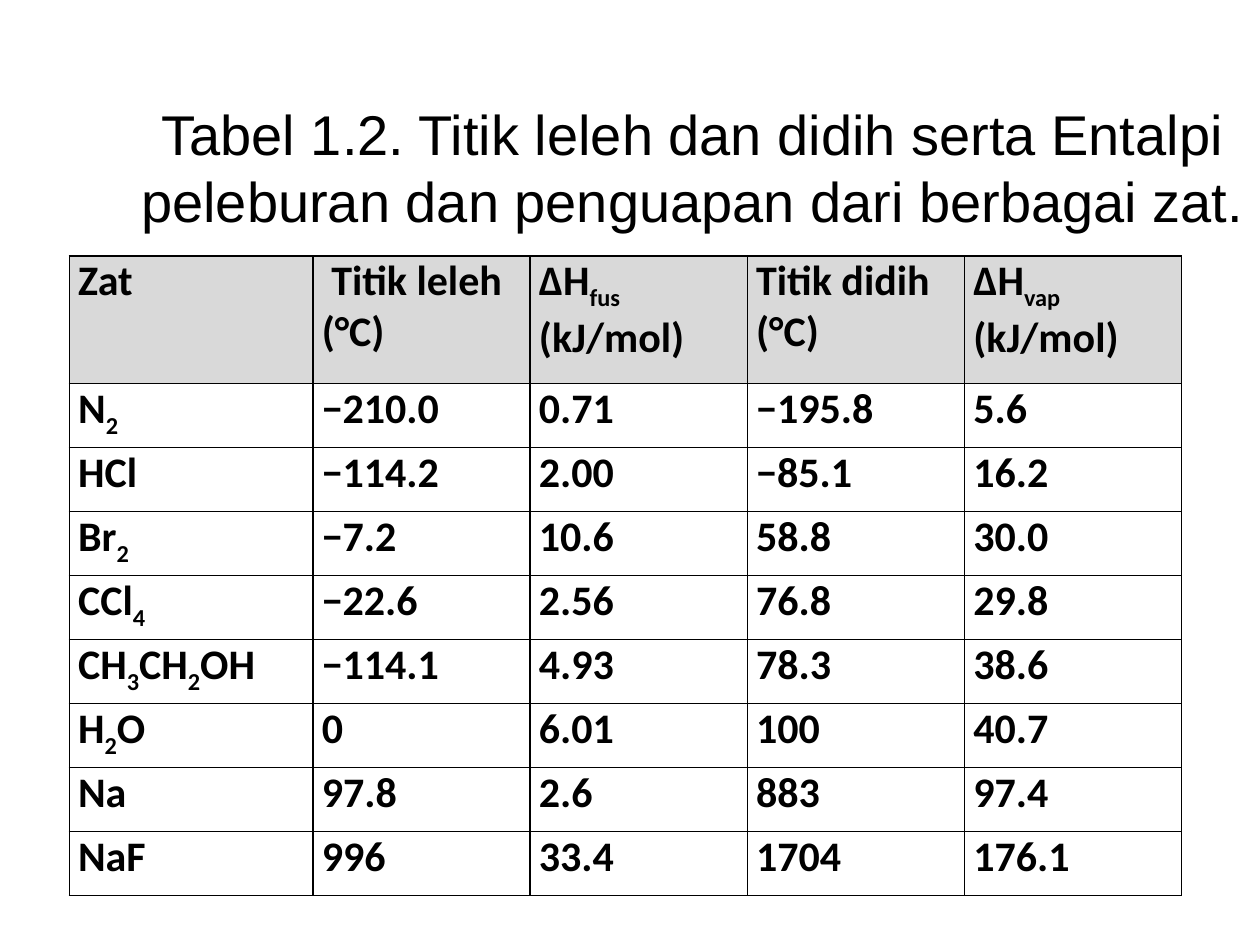
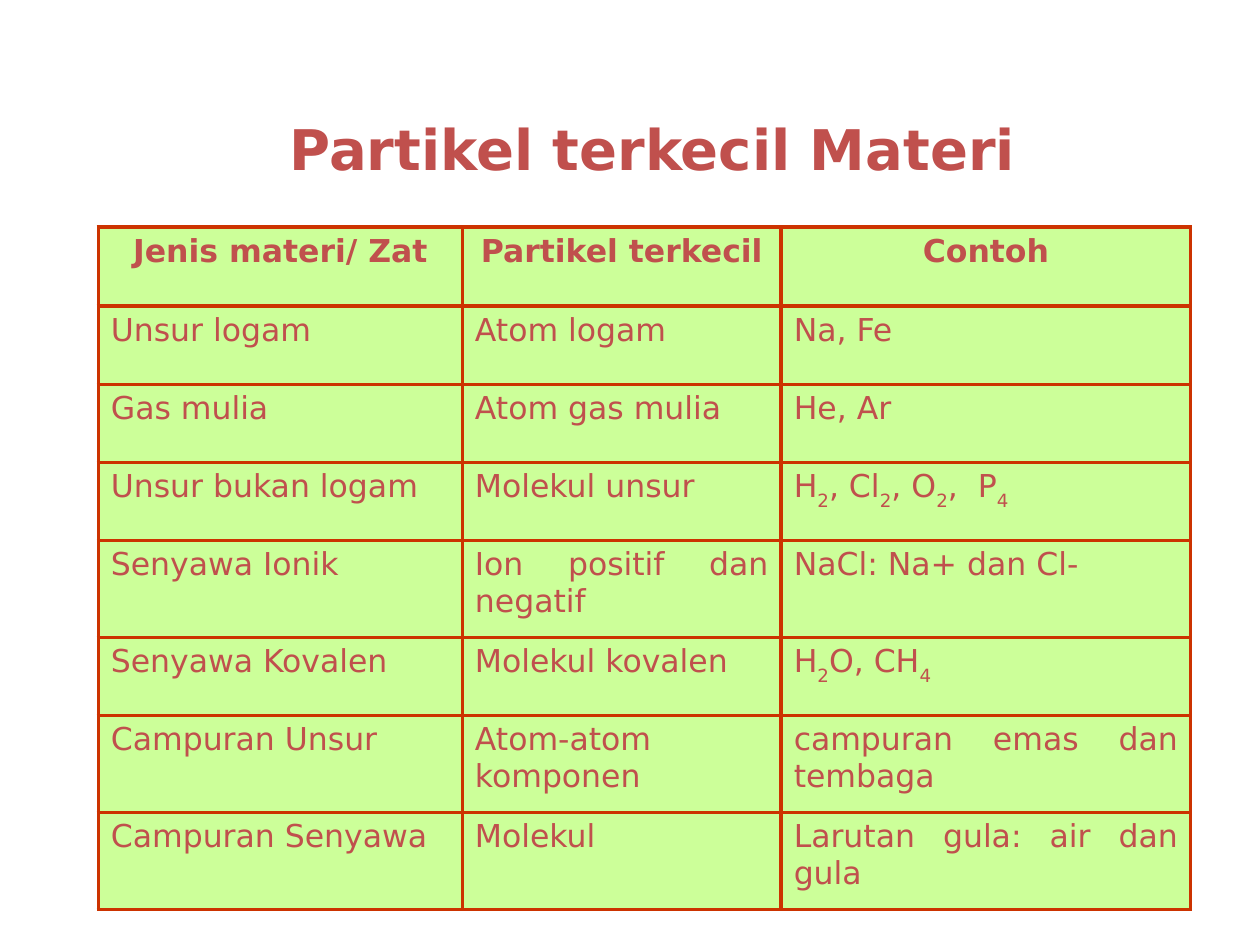
from dataclasses import dataclass
from typing import NamedTuple

from lxml import etree
from pptx import Presentation
from pptx import util as u
from pptx.dml.color import RGBColor
from pptx.enum import text
from pptx.oxml import ns

GRID_COLS, GRID_ROWS = 100, 75
SLIDE_W, SLIDE_H = u.Inches(10), u.Inches(7.5)


@dataclass(frozen=True)
class Theme:
    black: str = "000000"
    grey: str = "D9D9D9"
    red: str = "C0504D"
    rust: str = "CC3300"
    lime: str = "CCFF99"
    plain_face: str = "Arial"
    data_face: str = "Calibri"
    wide_face: str = "DejaVu Sans"
    title_size: float = 32
    data_size: float = 24
    kind_size: float = 18


THEME = Theme()


class Box(NamedTuple):
    """A place in grid columns and rows."""
    left: float
    top: float
    width: float
    height: float

    def emu(self) -> dict[str, int]:
        col, row = SLIDE_W / GRID_COLS, SLIDE_H / GRID_ROWS
        return dict(left=round(self.left * col), top=round(self.top * row),
                    width=round(self.width * col), height=round(self.height * row))


class Type(NamedTuple):
    face: str
    size: float
    color: str
    bold: bool = False


@dataclass(frozen=True)
class Title:
    words: str
    box: Box
    type: Type
    bottom_inset: float = 0.05


@dataclass(frozen=True)
class Grid:
    """A table; text between tildes is subscript, a new line a new paragraph."""
    box: Box
    col_shares: list[float]
    row_shares: list[float]
    cells: list[list[str]]
    head_type: Type
    body_type: Type
    head_fill: str
    body_fill: str | None
    border: str
    border_pt: float
    subscript: int
    margins: dict[str, float]
    head_align: text.PP_ALIGN
    body_align: text.PP_ALIGN


def set_all(target, values: dict) -> None:
    for name, value in values.items():
        setattr(target, name, value)


def set_font(font, style: Type) -> None:
    set_all(font, dict(name=style.face, size=u.Pt(style.size), bold=style.bold))
    font.color.rgb = RGBColor.from_string(style.color)


def write(p, words: str, style: Type, subscript: int = 0) -> None:
    for i, part in enumerate(words.split("~")):
        if part:
            r = p.add_run()
            r.text = part
            set_font(r.font, style)
            if i % 2:
                r._r.get_or_add_rPr().set("baseline", str(-1000 * subscript))


def add_title(slide, title: Title) -> None:
    sp = slide.shapes.title
    set_all(sp, title.box.emu())
    tf = sp.text_frame
    set_all(tf, dict(word_wrap=True, auto_size=text.MSO_AUTO_SIZE.NONE,
                     vertical_anchor=text.MSO_ANCHOR.MIDDLE,
                     margin_bottom=u.Inches(title.bottom_inset)))
    p = tf.paragraphs[0]
    p.alignment = text.PP_ALIGN.CENTER
    write(p, title.words, title.type)


def add_borders(cell, color: str, points: float) -> None:
    """Line all four sides; the lines must come before the fill in the XML."""
    tc_pr = cell._tc.get_or_add_tcPr()
    for i, side in enumerate(("lnL", "lnR", "lnT", "lnB")):
        ln = etree.Element(ns.qn(f"a:{side}"), w=str(u.Pt(points)))
        fill = etree.SubElement(ln, ns.qn("a:solidFill"))
        etree.SubElement(fill, ns.qn("a:srgbClr"), val=color)
        tc_pr.insert(i, ln)


def fill_cell(cell, words: str, grid: Grid, is_head: bool) -> None:
    color = grid.head_fill if is_head else grid.body_fill
    if color:
        cell.fill.solid()
        cell.fill.fore_color.rgb = RGBColor.from_string(color)
    else:
        cell.fill.background()
    add_borders(cell, grid.border, grid.border_pt)
    set_all(cell, {f"margin_{k}": u.Inches(v) for k, v in grid.margins.items()})
    tf = cell.text_frame
    for i, line in enumerate(words.split("\n")):
        p = tf.add_paragraph() if i else tf.paragraphs[0]
        p.alignment = grid.head_align if is_head else grid.body_align
        write(p, line, grid.head_type if is_head else grid.body_type, grid.subscript)


def add_grid(slide, grid: Grid) -> None:
    place = grid.box.emu()
    table = slide.shapes.add_table(len(grid.row_shares), len(grid.col_shares), **place).table
    set_all(table, dict(first_row=False, horz_banding=False))
    for col, share in zip(table.columns, grid.col_shares):
        col.width = round(place["width"] * share / sum(grid.col_shares))
    for row, share in zip(table.rows, grid.row_shares):
        row.height = round(place["height"] * share / sum(grid.row_shares))
    for i, line in enumerate(grid.cells):
        for j, words in enumerate(line):
            fill_cell(table.cell(i, j), words, grid, is_head=i == 0)


HEAT_CELLS = [
    ["Zat", " Titik leleh (°C)", "ΔH~fus~\n(kJ/mol)", "Titik didih (°C)", "ΔH~vap~\n(kJ/mol)"],
    ["N~2~", "−210.0", "0.71", "−195.8", "5.6"],
    ["HCl", "−114.2", "2.00", "−85.1", "16.2"],
    ["Br~2~", "−7.2", "10.6", "58.8", "30.0"],
    ["CCl~4~", "−22.6", "2.56", "76.8", "29.8"],
    ["CH~3~CH~2~OH", "−114.1", "4.93", "78.3", "38.6"],
    ["H~2~O", "0", "6.01", "100", "40.7"],
    ["Na", "97.8", "2.6", "883", "97.4"],
    ["NaF", "996", "33.4", "1704", "176.1"],
]
PARTICLE_CELLS = [
    ["Jenis materi/ Zat", "Partikel terkecil", "Contoh"],
    ["Unsur logam", "Atom logam", "Na, Fe"],
    ["Gas mulia", "Atom gas mulia", "He, Ar"],
    ["Unsur bukan logam", "Molekul unsur", "H~2~, Cl~2~, O~2~,  P~4~"],
    ["Senyawa Ionik", "Ion positif dan negatif", "NaCl: Na+ dan Cl-"],
    ["Senyawa Kovalen", "Molekul kovalen", "H~2~O, CH~4~"],
    ["Campuran Unsur", "Atom-atom komponen", "campuran emas dan tembaga"],
    ["Campuran Senyawa", "Molekul", "Larutan gula: air dan gula"],
]
ONE_LINE, TWO_LINES = 0.62, 0.77
HEAT_TYPE = Type(THEME.data_face, THEME.data_size, THEME.black, True)

SLIDES = [
    (Title("Tabel 1.2. Titik leleh dan didih serta Entalpi peleburan dan "
           "penguapan dari berbagai zat.",
           Box(10, 9.4, 90, 12.5),
           Type(THEME.plain_face, THEME.title_size, THEME.black), bottom_inset=0.54),
     Grid(Box(5.5, 20.3, 88.3, 50.8), [1.93] + [1.72] * 4, [2] + [1] * 8, HEAT_CELLS,
          HEAT_TYPE, HEAT_TYPE, THEME.grey, None, THEME.black, 1, 25,
          dict(left=0.07, right=0.07, top=0, bottom=0),
          text.PP_ALIGN.LEFT, text.PP_ALIGN.LEFT)),
    (Title("Partikel terkecil Materi", Box(17.2, 8.6, 69.2, 6.3),
           Type(THEME.wide_face, THEME.title_size, THEME.red, True)),
     Grid(Box(7.8, 18, 86.7, 54.2), [2.89, 2.53, 3.25],
          [0.63] + [ONE_LINE] * 3 + [TWO_LINES, ONE_LINE] + [TWO_LINES] * 2, PARTICLE_CELLS,
          Type(THEME.wide_face, THEME.kind_size, THEME.red, True),
          Type(THEME.wide_face, THEME.kind_size, THEME.red),
          THEME.lime, THEME.lime, THEME.rust, 2.25, 30,
          dict(left=0.1, right=0.1, top=0.05, bottom=0.05),
          text.PP_ALIGN.CENTER, text.PP_ALIGN.JUSTIFY)),
]


def main() -> None:
    prs = Presentation()
    set_all(prs, dict(slide_width=SLIDE_W, slide_height=SLIDE_H))
    title_only = prs.slide_layouts.get_by_name("Title Only")
    for title, grid in SLIDES:
        slide = prs.slides.add_slide(title_only)
        add_title(slide, title)
        add_grid(slide, grid)
    prs.save("out.pptx")


if __name__ == "__main__":
    main()
